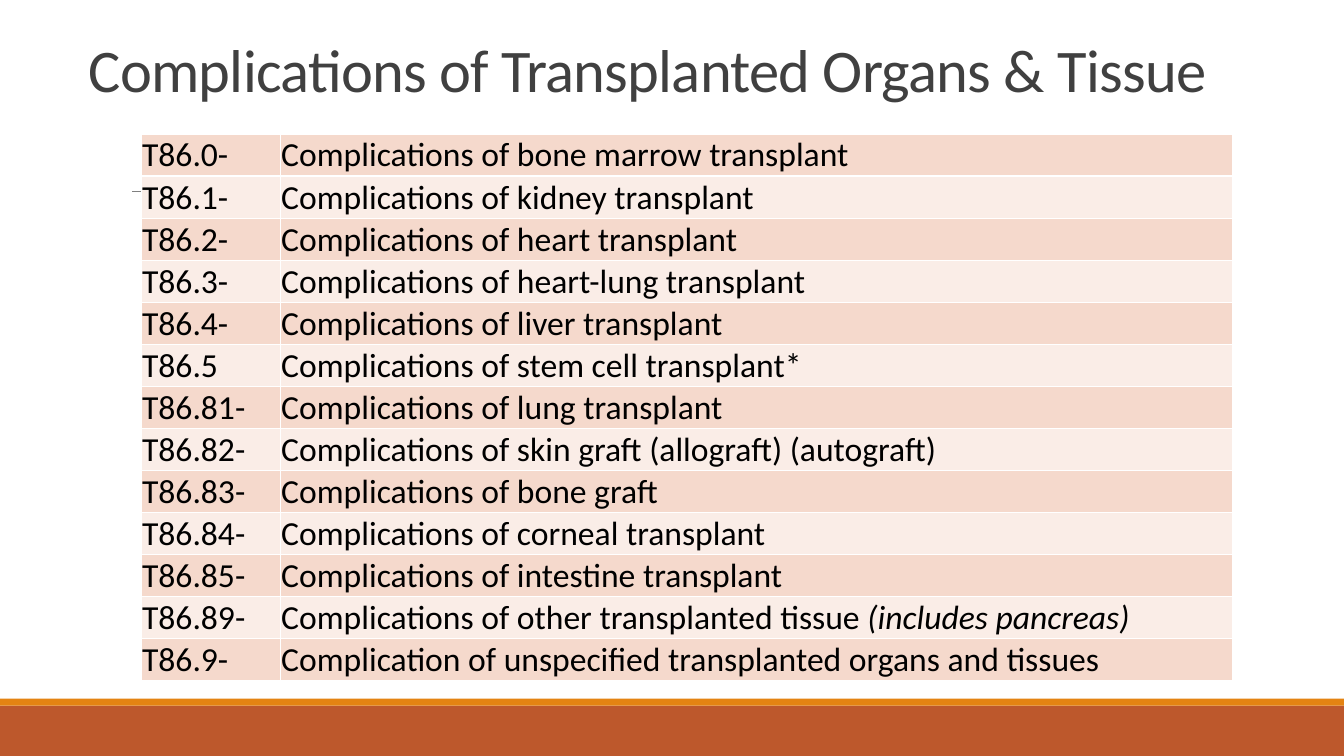
from typing import NamedTuple

import pptx
import pptx.dml.color
import pptx.enum.shapes
import pptx.enum.text
import pptx.oxml
import pptx.oxml.ns
import pptx.util
from pptx.dml.color import RGBColor

SLIDE_W = pptx.util.Inches(13.33)
SLIDE_H = pptx.util.Inches(7.5)
FONT = "Calibri"

RUST = RGBColor(0xBD, 0x58, 0x2C)
ORANGE = RGBColor(0xE4, 0x83, 0x12)
GRAY = RGBColor(0x80, 0x80, 0x80)
TITLE_GRAY = RGBColor(0x40, 0x40, 0x40)
BLACK = RGBColor(0x00, 0x00, 0x00)
WHITE = RGBColor(0xFF, 0xFF, 0xFF)
ROW_FILLS = (RGBColor(0xF5, 0xD9, 0xCC), RGBColor(0xFA, 0xED, 0xE7))


class Band(NamedTuple):
    top: float
    height: float
    color: RGBColor


class Code(NamedTuple):
    code: str
    meaning: str
    note: str = ""


# Positions and sizes are percentages of the slide's width or height
BANDS = (Band(93.33, 6.67, RUST), Band(92.4, 0.93, ORANGE))
TABLE_LEFT, TABLE_TOP = 10.5, 17.73
COLUMN_WIDTHS = (10.35, 70.89)
ROW_HEIGHT = 5.47

CODES = (
    Code("T86.0-", "Complications of bone marrow transplant"),
    Code("T86.1-", "Complications of kidney transplant"),
    Code("T86.2-", "Complications of heart transplant"),
    Code("T86.3-", "Complications of heart-lung transplant"),
    Code("T86.4-", "Complications of liver transplant"),
    Code("T86.5", "Complications of stem cell transplant*"),
    Code("T86.81-", "Complications of lung transplant"),
    Code("T86.82-", "Complications of skin graft (allograft) (autograft)"),
    Code("T86.83-", "Complications of bone graft"),
    Code("T86.84-", "Complications of corneal transplant"),
    Code("T86.85-", "Complications of intestine transplant"),
    Code("T86.89-", "Complications of other transplanted tissue ", "(includes pancreas)"),
    Code("T86.9-", "Complication of unspecified transplanted organs and tissues"),
)


def across(percent: float) -> int:
    return round(SLIDE_W * percent / 100)


def down(percent: float) -> int:
    return round(SLIDE_H * percent / 100)


def style_run(r, size: float, color: RGBColor) -> None:
    r.font.name = FONT
    r.font.size = pptx.util.Pt(size)
    r.font.color.rgb = color


def add_band(s, band: Band) -> None:
    sp = s.shapes.add_shape(
        pptx.enum.shapes.MSO_SHAPE.RECTANGLE,
        0, down(band.top), SLIDE_W, down(band.height),
    )
    sp.shadow.inherit = False
    sp.fill.solid()
    sp.fill.fore_color.rgb = band.color
    sp.line.fill.background()


def add_rule(s) -> None:
    y = down(25.33)
    rule = s.shapes.add_connector(
        pptx.enum.shapes.MSO_CONNECTOR.STRAIGHT, across(9.83), y, across(91.6), y
    )
    rule.line.color.rgb = GRAY
    rule.line.width = pptx.util.Pt(0.5)
    rule._element.spPr.append(pptx.oxml.parse_xml(
        f'<a:effectLst {pptx.oxml.ns.nsdecls("a")}/>'
    ))


def add_title(s, text: str) -> None:
    sp = s.shapes.add_textbox(across(5.85), down(-4.8), across(88.3), down(19.33))
    tf = sp.text_frame
    tf.word_wrap = True
    tf.vertical_anchor = pptx.enum.text.MSO_ANCHOR.BOTTOM
    tf.text = text
    p = tf.paragraphs[0]
    p.line_spacing = 0.85
    r = p.runs[0]
    style_run(r, 43.2, TITLE_GRAY)
    r.font._element.set("spc", "-50")


def add_borders(cell) -> None:
    tc_pr = cell._tc.get_or_add_tcPr()
    for side in ("lnL", "lnR", "lnT", "lnB"):
        tc_pr.append(pptx.oxml.parse_xml(
            f'<a:{side} {pptx.oxml.ns.nsdecls("a")} w="{pptx.util.Pt(1)}">'
            f'<a:solidFill><a:srgbClr val="{WHITE}"/></a:solidFill></a:{side}>'
        ))


def fill_cell(cell, text: str, note: str, fill: RGBColor) -> None:
    add_borders(cell)
    cell.fill.solid()
    cell.fill.fore_color.rgb = fill
    cell.margin_left = cell.margin_right = cell.margin_top = pptx.util.Inches(0.01)
    cell.margin_bottom = 0
    cell.vertical_anchor = pptx.enum.text.MSO_ANCHOR.BOTTOM
    cell.text_frame.text = text
    p = cell.text_frame.paragraphs[0]
    if note:
        r = p.add_run()
        r.text = note
        r.font.italic = True
    for r in p.runs:
        style_run(r, 24, BLACK)


def add_code_table(s) -> None:
    table = s.shapes.add_table(
        len(CODES), len(COLUMN_WIDTHS), across(TABLE_LEFT), down(TABLE_TOP),
        across(sum(COLUMN_WIDTHS)), down(ROW_HEIGHT * len(CODES)),
    ).table
    table.first_row = False
    for column, width in zip(table.columns, COLUMN_WIDTHS):
        column.width = across(width)
    for i, (row, entry) in enumerate(zip(table.rows, CODES)):
        row.height = down(ROW_HEIGHT)
        fill = ROW_FILLS[i % 2]
        fill_cell(row.cells[0], entry.code, "", fill)
        fill_cell(row.cells[1], entry.meaning, entry.note, fill)


def main() -> None:
    prs = pptx.Presentation()
    prs.slide_width, prs.slide_height = SLIDE_W, SLIDE_H
    s = prs.slides.add_slide(prs.slide_layouts[6])

    # Footer bands and the thin rule behind the table
    for band in BANDS:
        add_band(s, band)
    add_rule(s)

    # Table of codes and title
    add_code_table(s)
    add_title(s, "Complications of Transplanted Organs & Tissue")
    prs.save("out.pptx")


if __name__ == "__main__":
    main()
